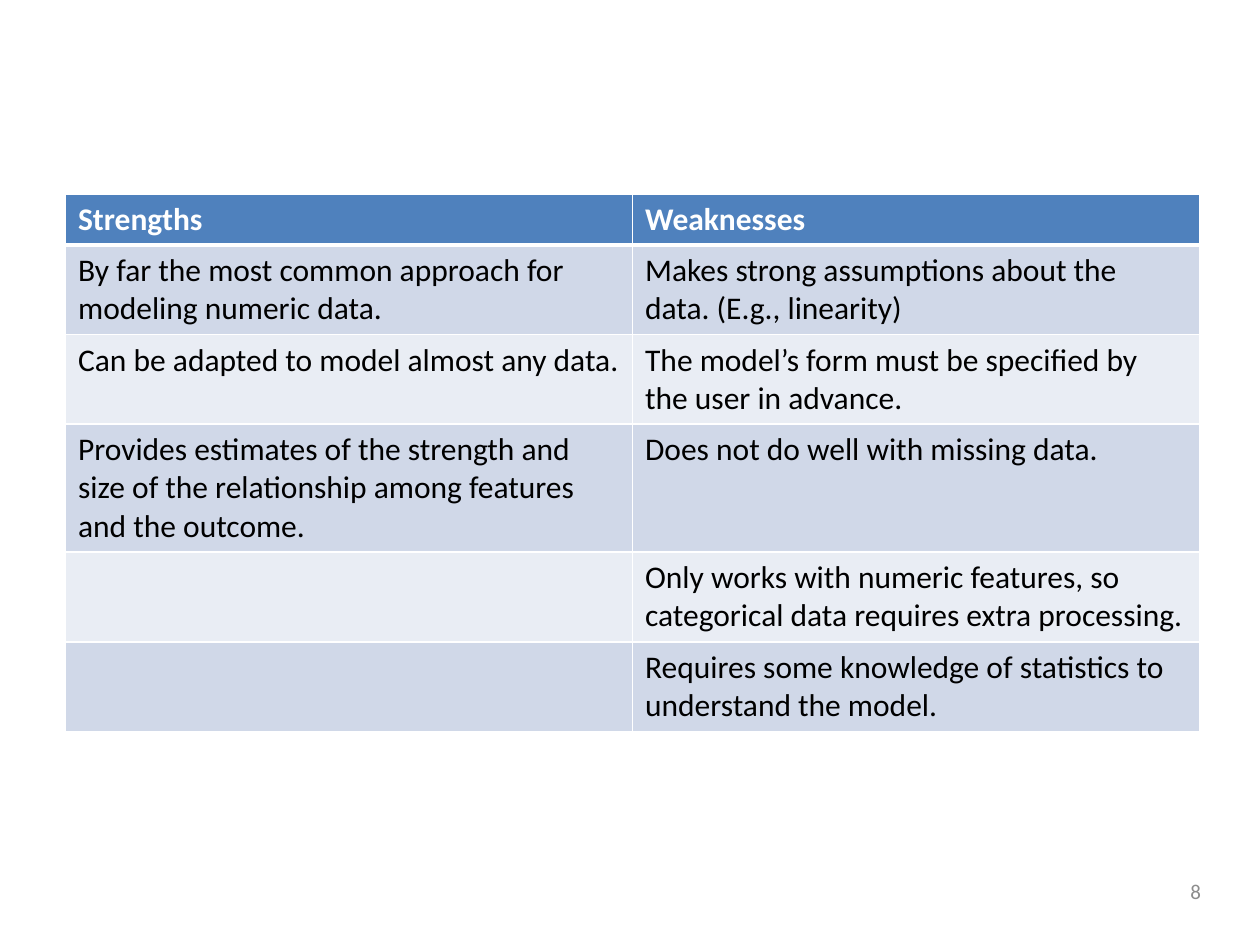
from lxml.etree import SubElement
from pptx import Presentation
from pptx.dml.color import RGBColor
from pptx.enum.text import MSO_ANCHOR, PP_ALIGN
from pptx.oxml.ns import qn
from pptx.util import Inches, Pt

COLORS = {"header": "4F81BD", "odd": "D0D8E8", "even": "E9EDF4",
          "white": "FFFFFF", "black": "000000", "gray": "8C8C8C"}
COLUMN_WIDTH = 4.5
LINE_HEIGHT, ROW_PADDING = 0.3, 0.1

# Lines of text in the tallest cell, strength, weakness
ROWS = [
    (1, "Strengths", "Weaknesses"),
    (2, "By far the most common approach for modeling numeric data.",
     "Makes strong assumptions about the data. (E.g., linearity)"),
    (2, "Can be adapted to model almost any data.",
     "The model’s form must be specified by the user in advance."),
    (3, "Provides estimates of the strength and size of the relationship "
        "among features and the outcome.",
     "Does not do well with missing data."),
    (2, "", "Only works with numeric features, so categorical data requires "
            "extra processing."),
    (2, "", "Requires some knowledge of statistics to understand the model."),
]


def set_font(paragraph, size, color, bold=False):
    font = paragraph.font
    font.name, font.size, font.bold = "Calibri", Pt(size), bold
    font.color.rgb = RGBColor.from_string(COLORS[color])


def add_borders(cell, top, bottom):
    """Draw white cell edges; must run before the cell gets its fill."""
    properties = cell._tc.get_or_add_tcPr()
    for edge, width in (("L", 1), ("R", 1), ("T", top), ("B", bottom)):
        line = SubElement(properties, qn(f"a:ln{edge}"), w=str(Pt(width)))
        fill = SubElement(line, qn("a:solidFill"))
        SubElement(fill, qn("a:srgbClr"), val=COLORS["white"])


prs = Presentation()
prs.slide_width, prs.slide_height = Inches(10), Inches(7.5)
slide = prs.slides.add_slide(prs.slide_layouts[6])

heights = [ROW_PADDING + LINE_HEIGHT * lines for lines, *_ in ROWS]
comparison = slide.shapes.add_table(
    len(ROWS), 2, Inches(0.52), Inches(1.54),
    Inches(2 * COLUMN_WIDTH), Inches(sum(heights))).table

for r, (_, *texts) in enumerate(ROWS):
    comparison.rows[r].height = Inches(heights[r])
    is_header = r == 0
    background = "header" if is_header else "odd" if r % 2 else "even"
    for c, text in enumerate(texts):
        cell = comparison.cell(r, c)
        add_borders(cell, top=3 if r == 1 else 1, bottom=3 if is_header else 1)
        cell.fill.solid()
        cell.fill.fore_color.rgb = RGBColor.from_string(COLORS[background])
        cell.text = text
        set_font(cell.text_frame.paragraphs[0], 18,
                 "white" if is_header else "black", bold=is_header)

page_number = slide.shapes.add_textbox(
    Inches(7.3), Inches(6.87), Inches(2.33), Inches(0.4)).text_frame
page_number.word_wrap = True
page_number.vertical_anchor = MSO_ANCHOR.MIDDLE
page_number.text = "8"
page_number.paragraphs[0].alignment = PP_ALIGN.RIGHT
set_font(page_number.paragraphs[0], 12, "gray")

prs.save("out.pptx")
